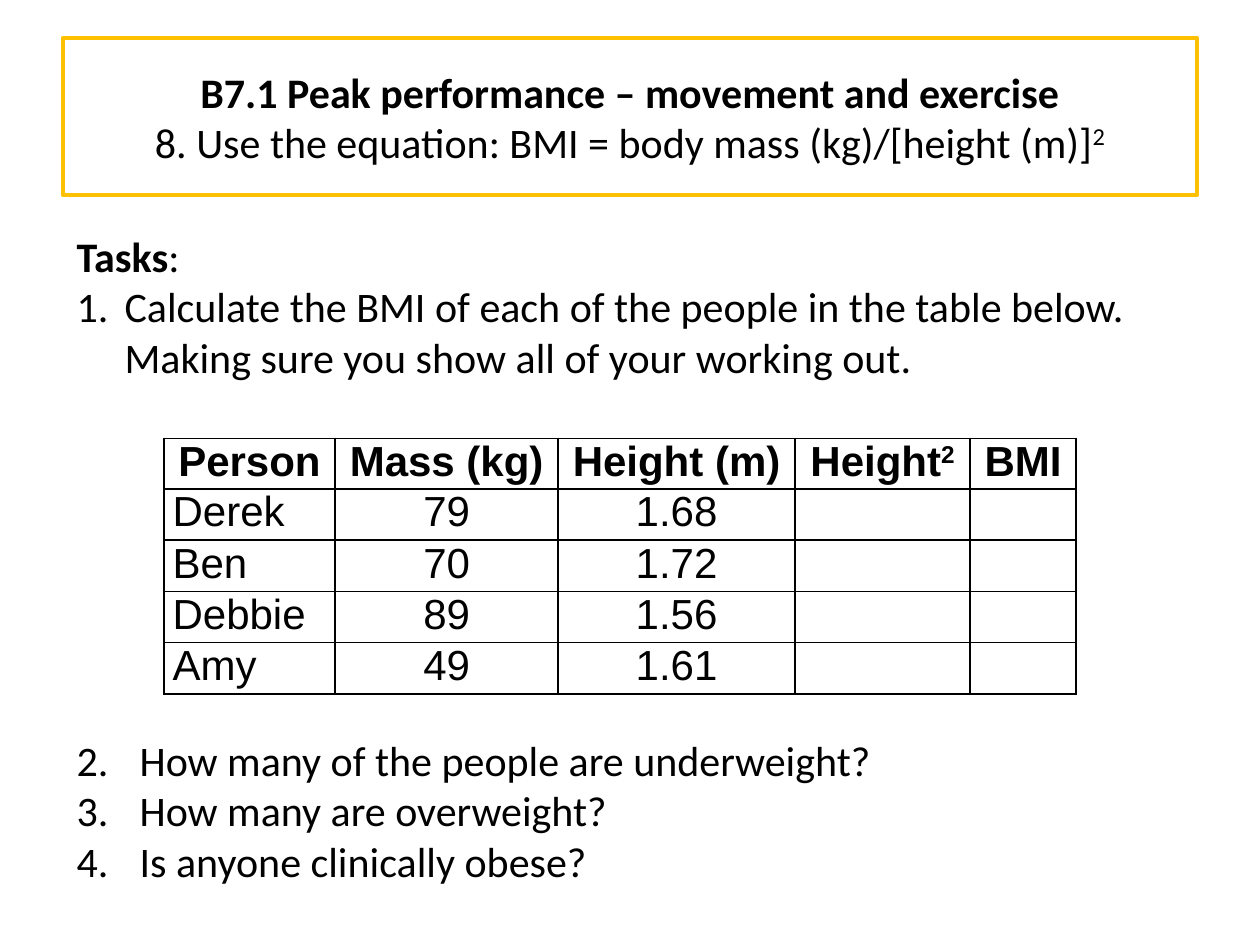
from dataclasses import dataclass

from lxml import etree
from pptx import Presentation
from pptx.dml.color import RGBColor
from pptx.enum.shapes import MSO_SHAPE
from pptx.enum.text import MSO_ANCHOR, PP_ALIGN
from pptx.oxml.ns import qn
from pptx.util import Emu, Inches, Pt

RECTANGLE = MSO_SHAPE.RECTANGLE
MIDDLE = MSO_ANCHOR.MIDDLE
LEFT, CENTER = PP_ALIGN.LEFT, PP_ALIGN.CENTER

COLORS = {"ink": "000000", "frame": "FFC000"}
UNIT = Inches(0.1)
TEXT_SIZE = Pt(24)
LINE_PITCH = 4
TABLE_GAP = 7 * LINE_PITCH
BREAK = "\n"
CELL_FORMAT = {
    "margin_left": Inches(0.07),
    "margin_right": Inches(0.07),
    "margin_top": 0,
    "margin_bottom": 0,
}


@dataclass(frozen=True)
class Area:
    left: float
    top: float
    width: float
    height: float

    def lengths(self) -> tuple:
        return tuple(units(value) for value in (self.left, self.top, self.width, self.height))


@dataclass(frozen=True)
class Span:
    text: str
    bold: bool = False
    raised: bool = False


@dataclass(frozen=True)
class Para:
    spans: tuple
    align: PP_ALIGN = LEFT
    indent: float = 0
    number: int = 0
    before: float = 0


TITLE_AREA = Area(5, 3, 90, 12.5)
TABLE_AREA = Area(13, 34.8, 72.4, 20)
TASKS_AREA = Area(5.1, 17.8, 89.8, 57.6)

TITLE = Para(
    (
        Span("B7.1 Peak performance – movement and exercise", bold=True),
        Span(BREAK),
        Span("8. Use the equation: BMI = body mass (kg)/[height (m)]"),
        Span("2", raised=True),
    ),
    align=CENTER,
)
QUESTIONS = (
    "How many of the people are underweight?",
    "How many are overweight?",
    "Is anyone clinically obese?",
)
TASKS = [
    Para((Span("Tasks", bold=True), Span(":"))),
    Para(
        (Span(
            "Calculate the BMI of each of the people in the table below. "
            "Making sure you show all of your working out."
        ),),
        indent=3.8,
        number=1,
    ),
] + [
    Para((Span(question),), indent=5, number=number, before=TABLE_GAP if number == 2 else 0)
    for number, question in enumerate(QUESTIONS, start=2)
]
COLUMN_WIDTHS = (13.6, 17.7, 18.8, 13.9, 8.4)
HEADINGS = (("Person",), ("Mass (kg)",), ("Height (m)",), ("Height", "2"), ("BMI",))
PEOPLE = (
    ("Derek", "79", "1.68", "", ""),
    ("Ben", "70", "1.72", "", ""),
    ("Debbie", "89", "1.56", "", ""),
    ("Amy", "49", "1.61", "", ""),
)


def units(value: float) -> Emu:
    return Emu(round(value * UNIT))


def color(name: str) -> RGBColor:
    return RGBColor.from_string(COLORS[name])


def set_format(target, values: dict) -> None:
    for name, value in values.items():
        setattr(target, name, value)


def write_para(paragraph, para: Para, font: str) -> None:
    paragraph.alignment = para.align
    paragraph.font.size = TEXT_SIZE
    if para.before:
        paragraph.space_before = units(para.before)
    if para.number:
        properties = paragraph._p.get_or_add_pPr()
        properties.set("marL", str(units(para.indent)))
        properties.set("indent", str(-units(para.indent)))
        bullet_font = etree.Element(qn("a:buFont"), typeface="+mj-lt")
        bullet = etree.Element(
            qn("a:buAutoNum"), type="arabicPeriod", startAt=str(para.number)
        )
        first_default = properties.find(qn("a:defRPr"))
        for element in (bullet_font, bullet):
            first_default.addprevious(element)
    for span in para.spans:
        if span.text == BREAK:
            paragraph.add_line_break()
            continue
        run = paragraph.add_run()
        run.text = span.text
        set_format(run.font, {"name": font, "size": TEXT_SIZE, "bold": span.bold})
        run.font.color.rgb = color("ink")
        if span.raised:
            run._r.get_or_add_rPr().set("baseline", "30000")


def draw_title(page) -> None:
    box = page.shapes.add_shape(RECTANGLE, *TITLE_AREA.lengths())
    box.shadow.inherit = False
    box.fill.background()
    box.line.color.rgb = color("frame")
    box.line.width = Pt(2.25)
    set_format(box.text_frame, {"word_wrap": True, "vertical_anchor": MIDDLE})
    write_para(box.text_frame.paragraphs[0], TITLE, "Calibri")


def draw_borders(cell) -> None:
    properties = cell._tc.get_or_add_tcPr()
    for position, side in enumerate(("lnL", "lnR", "lnT", "lnB")):
        line = etree.Element(qn(f"a:{side}"), w=str(Pt(1)))
        fill = etree.SubElement(line, qn("a:solidFill"))
        etree.SubElement(fill, qn("a:srgbClr"), val=COLORS["ink"])
        properties.insert(position, line)


def draw_table(page) -> None:
    rows = [
        [
            Para(
                tuple(Span(text, bold=True, raised=part > 0) for part, text in enumerate(heading)),
                align=CENTER,
            )
            for heading in HEADINGS
        ]
    ] + [
        [
            Para((Span(text),) if text else (), align=CENTER if column else LEFT)
            for column, text in enumerate(person)
        ]
        for person in PEOPLE
    ]
    table = page.shapes.add_table(len(rows), len(HEADINGS), *TABLE_AREA.lengths()).table
    set_format(table, {"first_row": False, "horz_banding": False})
    for column, width in zip(table.columns, COLUMN_WIDTHS):
        column.width = units(width)
    for row, paras in zip(table.rows, rows):
        row.height = units(TABLE_AREA.height / len(rows))
        for cell, para in zip(row.cells, paras):
            set_format(cell, CELL_FORMAT)
            cell.fill.background()
            draw_borders(cell)
            write_para(cell.text_frame.paragraphs[0], para, "Arial")


def draw_tasks(page) -> None:
    frame = page.shapes.add_textbox(*TASKS_AREA.lengths()).text_frame
    frame.word_wrap = True
    for index, para in enumerate(TASKS):
        paragraph = frame.add_paragraph() if index else frame.paragraphs[0]
        write_para(paragraph, para, "Calibri")


def main() -> None:
    deck = Presentation()
    set_format(deck, {"slide_width": units(100), "slide_height": units(75)})
    page = deck.slides.add_slide(deck.slide_layouts[6])
    draw_title(page)
    draw_table(page)
    draw_tasks(page)
    deck.save("out.pptx")


if __name__ == "__main__":
    main()
